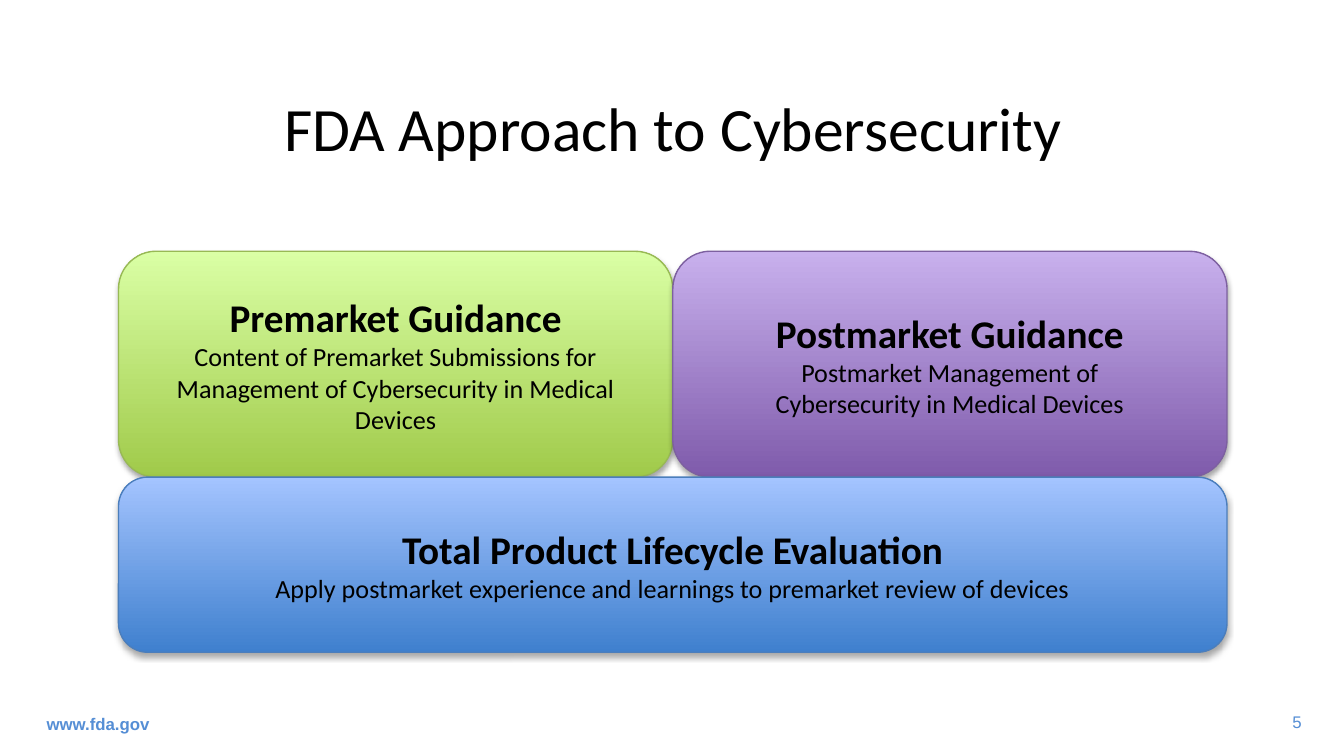
from dataclasses import dataclass

from lxml import etree
from pptx import Presentation
from pptx.dml.color import RGBColor
from pptx.enum.shapes import MSO_SHAPE
from pptx.enum.text import MSO_ANCHOR, PP_ALIGN
from pptx.oxml.ns import qn
from pptx.util import Cm, Pt

ROUND = MSO_SHAPE.ROUNDED_RECTANGLE
TOP, MIDDLE = MSO_ANCHOR.TOP, MSO_ANCHOR.MIDDLE
LEFT, CENTER, RIGHT = PP_ALIGN.LEFT, PP_ALIGN.CENTER, PP_ALIGN.RIGHT


@dataclass(frozen=True)
class Theme:
    body: str = "Calibri"
    small: str = "Arial"
    ink: str = "000000"
    foot: str = "558ED5"
    # Each card: bottom colour, top colour, outline
    green: tuple = ("A0CA4A", "DAFFA5", "98B955")
    purple: tuple = ("7F5BAB", "C8B0ED", "7D60A0")
    blue: tuple = ("3F80CE", "A4C4FF", "4B7EBC")
    title_size: float = 33
    head_size: float = 21
    text_size: float = 14
    foot_size: float = 9


THEME = Theme()


def place(shape, box):
    shape.left, shape.top, shape.width, shape.height = (Cm(n) for n in box)


def set_frame(frame, anchor):
    frame.word_wrap = True
    frame.vertical_anchor = anchor
    frame.margin_left = frame.margin_right = Cm(0.19)
    frame.margin_top = frame.margin_bottom = Cm(0.1)


def style(para, face, size, color, bold=False, align=CENTER):
    para.alignment = align
    font = para.font
    font.name, font.size, font.bold = face, Pt(size), bold
    font.color.rgb = RGBColor.from_string(color)


def add_shadow(shape):
    """Give the shape a soft shadow straight below it."""
    shape.shadow.inherit = False
    effects = shape._element.spPr.find(qn("a:effectLst"))
    outer = etree.SubElement(
        effects, qn("a:outerShdw"), blurRad=str(Pt(3.1)), dist=str(Pt(1.8)),
        dir="5400000", rotWithShape="0")
    color = etree.SubElement(outer, qn("a:srgbClr"), val=THEME.ink)
    etree.SubElement(color, qn("a:alpha"), val="35000")


def add_title(slide, box, text):
    title = slide.shapes.title
    place(title, box)
    set_frame(title.text_frame, MIDDLE)
    title.text_frame.text = text
    style(title.text_frame.paragraphs[0], THEME.body, THEME.title_size, THEME.ink)


def add_card(slide, box, tones, head, *lines):
    card = slide.shapes.add_shape(ROUND, *(Cm(n) for n in box))
    low, high, edge = tones
    card.fill.gradient()
    card.fill.gradient_angle = 90
    for stop, tone in zip(card.fill.gradient_stops, (low, high)):
        stop.color.rgb = RGBColor.from_string(tone)
    card.line.color.rgb = RGBColor.from_string(edge)
    card.line.width = Pt(0.75)
    add_shadow(card)

    # Bold heading over plain lines
    frame = card.text_frame
    set_frame(frame, MIDDLE)
    frame.text = "\n".join((head, *lines))
    first, *rest = frame.paragraphs
    style(first, THEME.body, THEME.head_size, THEME.ink, bold=True)
    for para in rest:
        style(para, THEME.body, THEME.text_size, THEME.ink)


def add_cards(slide, box):
    """Two cards side by side on top of a full-width base."""
    left, top, width, height = box
    half, upper = width / 2, 4.27
    add_card(slide, (left, top, half, upper), THEME.green,
             "Premarket Guidance",
             "Content of Premarket Submissions for Management of "
             "Cybersecurity in Medical Devices")
    add_card(slide, (left + half, top, half, upper), THEME.purple,
             "Postmarket Guidance",
             "Postmarket Management of", "Cybersecurity in Medical Devices")
    add_card(slide, (left, top + upper, width, height - upper), THEME.blue,
             "Total Product Lifecycle Evaluation",
             "Apply postmarket experience and learnings to premarket "
             "review of devices")


def add_note(slide, box, text, anchor, align, bold):
    note = slide.shapes.add_textbox(*(Cm(n) for n in box))
    set_frame(note.text_frame, anchor)
    note.text_frame.text = text
    style(note.text_frame.paragraphs[0], THEME.small, THEME.foot_size,
          THEME.foot, bold, align)


def add_footer(slide, box):
    """Web address at the left edge, page number at the right."""
    left, top, width, height = box
    page = 0.79
    add_note(slide, (left, top, 8.05, height), "www.fda.gov", MIDDLE, LEFT, True)
    add_note(slide, (left + width - page, top + 0.05, page, 0.58), "5",
             TOP, RIGHT, False)


def main():
    deck = Presentation()
    deck.slide_width, deck.slide_height = Cm(25.4), Cm(14.29)
    slide = deck.slides.add_slide(deck.slide_layouts[5])
    add_title(slide, (0.9, 1.43, 23.64, 1.93), "FDA Approach to Cybersecurity")
    add_cards(slide, (2.24, 4.75, 20.95, 7.58))
    add_footer(slide, (0.69, 13.3, 24.1, 0.76))
    deck.save("out.pptx")


if __name__ == "__main__":
    main()
